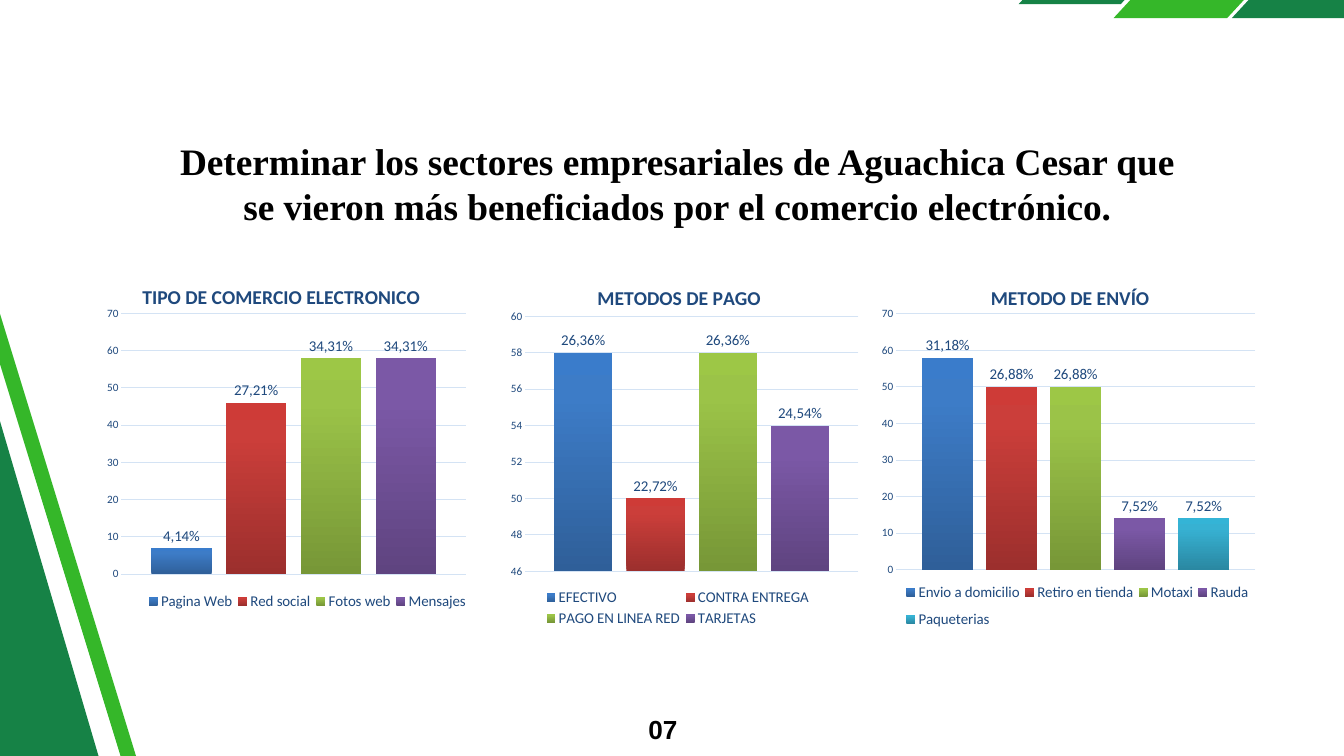
from copy import deepcopy

from lxml import etree
from pptx import Presentation, util as u
from pptx.chart.data import CategoryChartData
from pptx.dml.color import RGBColor
from pptx.enum import chart as ch, text
from pptx.oxml.ns import qn

COLUMNS, ROWS = 20, 11.25  # grid of one-inch cells
DARK_GREEN, GREEN = "168246", "35B729"
NAVY, GRID_BLUE, BLACK = "1F497D", "D4E3F4", "000000"
GRADIENT_POSITIONS = (0, 0.8, 1)
GRADIENTS = [
    ("2F5F99", "3D7CC7", "3A7CCB"),
    ("9C2F2D", "CB3E3A", "CE3B37"),
    ("779737", "9BC348", "9DC746"),
    ("5F4480", "7B58A6", "7C57A8"),
    ("2A88A2", "37B1D2", "34B4D6"),
]
CHART_TOP = 4.01

# Frame is left, width, height in cells; layouts are shares of the chart.
CHARTS = [
    dict(title="TIPO DE COMERCIO ELECTRONICO", frame=(1.25, 5.83, 5.17),
         scale=(0, 70, 10), title_at=(0.14, 0.03),
         plot=(0.095, 0.126, 0.88, 0.751), legend=(0.15, 0.92, 0.84, 0.07),
         bars=[("Pagina Web", 7, "4,14%"), ("Red social", 46, "27,21%"),
               ("Fotos web", 58, "34,31%"), ("Mensajes", 58, "34,31%")]),
    dict(title="METODOS DE PAGO", frame=(7.25, 5.67, 5.36),
         scale=(46, 60, 2), title_at=(0.28, 0.03),
         plot=(0.099, 0.13, 0.875, 0.708), legend=(0.14, 0.88, 0.72, 0.12),
         bars=[("EFECTIVO", 58, "26,36%"), ("CONTRA ENTREGA", 50, "22,72%"),
               ("PAGO EN LINEA RED", 58, "26,36%"),
               ("TARJETAS", 54, "24,54%")]),
    dict(title="METODO DE ENVÍO", frame=(13, 5.83, 5.53),
         scale=(0, 70, 10), title_at=(0.29, 0.03),
         plot=(0.057, 0.119, 0.917, 0.689), legend=(0.07, 0.82, 0.9, 0.17),
         bars=[("Envio a domicilio", 58, "31,18%"),
               ("Retiro en tienda", 50, "26,88%"), ("Motaxi", 50, "26,88%"),
               ("Rauda", 14, "7,52%"), ("Paqueterias", 14, "7,52%")]),
]


def rgb(hex_color):
    return RGBColor.from_string(hex_color)


def cells(*counts):
    return [u.Inches(count) for count in counts]


def set_font(font, size, color=NAVY, name="Calibri", bold=False):
    font.size, font.name, font.bold = u.Pt(size), name, bold
    font.color.rgb = rgb(color)


def write(frame, wording, align=text.PP_ALIGN.CENTER, spacing=None, **font):
    """Put one formatted paragraph into a text frame."""
    paragraph = frame.paragraphs[0]
    paragraph.alignment = align
    if spacing:
        paragraph.line_spacing = u.Pt(spacing)
    run = paragraph.add_run()
    run.text = wording
    set_font(run.font, **font)


def add_text(slide, box, wording, **style):
    frame = slide.shapes.add_textbox(*cells(*box)).text_frame
    frame.word_wrap = True
    frame.margin_left = frame.margin_top = 0
    frame.margin_right = frame.margin_bottom = 0
    write(frame, wording, **style)


def add_band(slide, left, top, width, height, color, slant=0, rotation=0):
    """Draw a parallelogram whose lower edge is shifted left by slant."""
    bottom = top + height
    corners = [cells(*corner) for corner in (
        (left, top), (left + width, top),
        (left + width - slant, bottom), (left - slant, bottom))]
    builder = slide.shapes.build_freeform(*corners[0])
    builder.add_line_segments(corners[1:], close=True)
    band = builder.convert_to_shape()
    band.shadow.inherit = False
    band.fill.solid()
    band.fill.fore_color.rgb = rgb(color)
    band.line.fill.background()
    band.rotation = rotation


def place(element, shares, inner=False):
    """Give a chart part a manual layout of x, y and optionally w, h."""
    layout = element.find(qn("c:layout"))
    if layout is None:
        layout = etree.Element(qn("c:layout"))
        element.insert(0, layout)
    manual = etree.SubElement(layout, qn("c:manualLayout"))
    settings = [("layoutTarget", "inner")] if inner else []
    settings += [("xMode", "edge"), ("yMode", "edge")]
    settings += zip("xywh", shares)
    for tag, value in settings:
        etree.SubElement(manual, qn(f"c:{tag}")).set("val", str(value))


def fill_gradient(series, colors):
    fill = series.format.fill
    fill.gradient()
    fill.gradient_angle = 90
    stop_list = series._element.find(".//" + qn("a:gsLst"))
    stop_list.append(deepcopy(stop_list[-1]))
    for stop, position, color in zip(fill.gradient_stops,
                                     GRADIENT_POSITIONS, colors):
        stop.position = position
        stop.color.rgb = rgb(color)


def format_axes(chart, scale):
    chart.category_axis.visible = False
    axis = chart.value_axis
    axis.minimum_scale, axis.maximum_scale, axis.major_unit = scale
    axis.major_tick_mark = ch.XL_TICK_MARK.NONE
    axis.format.line.fill.background()
    axis.major_gridlines.format.line.color.rgb = rgb(GRID_BLUE)
    axis.major_gridlines.format.line.width = u.Pt(0.75)
    set_font(axis.tick_labels.font, 12)


def add_column_chart(slide, title, frame, scale, title_at, plot, legend, bars):
    data = CategoryChartData()
    data.categories = ["1"]
    for name, value, _ in bars:
        data.add_series(name, [value])
    left, width, height = frame
    chart = slide.shapes.add_chart(
        ch.XL_CHART_TYPE.COLUMN_CLUSTERED,
        *cells(left, CHART_TOP, width, height), data).chart
    set_font(chart.font, 10, BLACK)
    format_axes(chart, scale)

    columns = chart.plots[0]
    columns.gap_width, columns.overlap = 100, -24
    columns.vary_by_categories = False
    for series, colors, (_, _, share) in zip(columns.series, GRADIENTS, bars):
        fill_gradient(series, colors)
        label = series.points[0].data_label
        write(label.text_frame, share, size=16)
        label.position = ch.XL_LABEL_POSITION.OUTSIDE_END

    chart.has_title = True
    write(chart.chart_title.text_frame, title, size=21, bold=True)
    chart.has_legend = True
    chart.legend.position = ch.XL_LEGEND_POSITION.BOTTOM
    chart.legend.include_in_layout = False
    set_font(chart.legend.font, 16)

    root = chart._chartSpace
    place(root.find(".//" + qn("c:title")), title_at)
    place(root.find(".//" + qn("c:plotArea")), plot, inner=True)
    place(root.find(".//" + qn("c:legend")), legend)


def main():
    deck = Presentation()
    deck.slide_width, deck.slide_height = cells(COLUMNS, ROWS)
    slide = deck.slides.add_slide(deck.slide_layouts[6])

    add_band(slide, 16.01, -0.86, 1.52, 0.92, DARK_GREEN, slant=0.85)
    for left, color in ((17.8, GREEN), (19.56, DARK_GREEN)):
        add_band(slide, left, -1.06, 1.69, 1.33, color, slant=1.23)
    add_band(slide, -10.09, 6.23, 16.41, 5.01, DARK_GREEN, rotation=253.6)
    add_band(slide, -7.08, 8.59, 16.41, 0.22, GREEN, rotation=252.9)

    add_text(slide, (2.62, 2.06, 14.92, 1.35),
             "Determinar los sectores empresariales de Aguachica Cesar que "
             "se vieron más beneficiados por el comercio electrónico.",
             size=40, color=BLACK, name="Times New Roman", bold=True)
    add_text(slide, (9.52, 10.54, 0.56, 0.5), "07",
             align=text.PP_ALIGN.RIGHT, spacing=39.2,
             size=28, color=BLACK, name="Arial", bold=True)
    for content in CHARTS:
        add_column_chart(slide, **content)
    deck.save("out.pptx")


if __name__ == "__main__":
    main()
